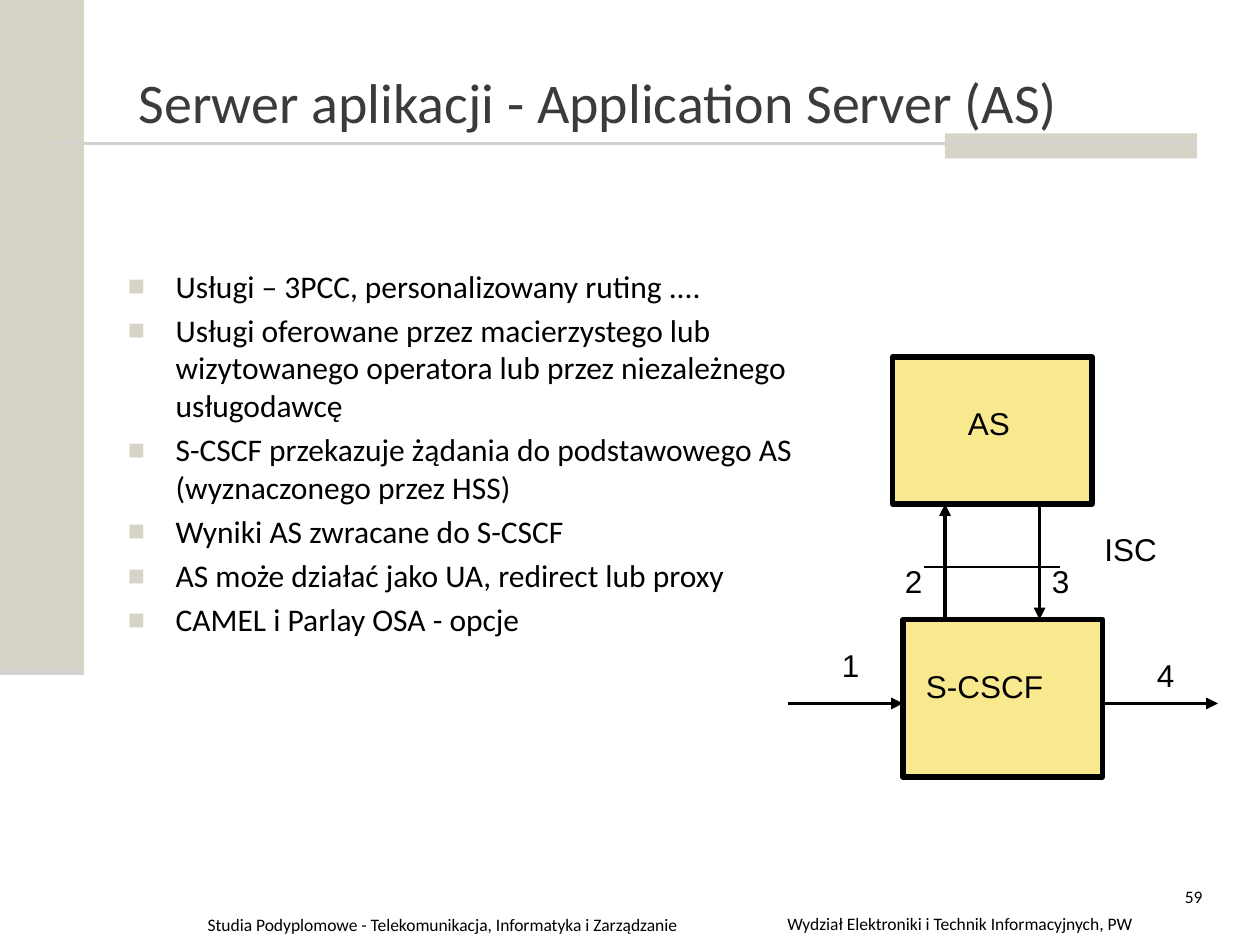
from lxml import etree
from pptx import Presentation
from pptx.dml.color import RGBColor
from pptx.enum.shapes import MSO_CONNECTOR, MSO_SHAPE
from pptx.enum.text import MSO_ANCHOR, PP_ALIGN
from pptx.oxml.ns import qn
from pptx.util import Inches, Pt

LINE = MSO_CONNECTOR.STRAIGHT
RECT = MSO_SHAPE.RECTANGLE
MIDDLE, TOP = MSO_ANCHOR.MIDDLE, MSO_ANCHOR.TOP
LEFT, CENTER, RIGHT = PP_ALIGN.LEFT, PP_ALIGN.CENTER, PP_ALIGN.RIGHT
COLS, ROWS = 120, 90
BLACK, GREY, SAND, RULE, CREAM = "000000", "3B3B3B", "D8D3C7", "D4D2D0", "F9E98E"


def color(code):
    return RGBColor.from_string(code)


def add(parent, tag, **attrs):
    return etree.SubElement(parent, qn(tag), attrs)


class Deck:
    body, label = "Calibri", "Arial"

    def __init__(self):
        self.prs = Presentation()
        self.prs.slide_width, self.prs.slide_height = Inches(10), Inches(7.5)
        self.slide = self.prs.slides.add_slide(self.prs.slide_layouts[5])
        self.shapes = self.slide.shapes

    def grid(self, x, y):
        return (round(self.prs.slide_width * x / COLS),
                round(self.prs.slide_height * y / ROWS))

    def style(self, para, font, size, ink, align=LEFT):
        para.alignment = align
        for run in para.runs:
            run.font.name, run.font.size = font, Pt(size)
            run.font.color.rgb = color(ink)

    def title(self, text, x, y, w, h):
        box = self.shapes.title
        box.left, box.top = self.grid(x, y)
        box.width, box.height = self.grid(w, h)
        frame = box.text_frame
        frame.text = text
        frame.vertical_anchor = MIDDLE
        self.style(frame.paragraphs[0], self.body, 32, GREY)

    def rect(self, x, y, w, h, fill, edge=None):
        box = self.shapes.add_shape(RECT, *self.grid(x, y), *self.grid(w, h))
        box.shadow.inherit = False
        box.fill.solid()
        box.fill.fore_color.rgb = color(fill)
        if edge:
            box.line.color.rgb = color(edge)
            box.line.width = Pt(3)
        else:
            box.line.fill.background()

    def line(self, x1, y1, x2, y2, ink=BLACK, width=2.25, arrow=False):
        line = self.shapes.add_connector(LINE, *self.grid(x1, y1), *self.grid(x2, y2))
        line.line.color.rgb = color(ink)
        line.line.width = Pt(width)
        if arrow:
            add(line.line._get_or_add_ln(), "a:tailEnd", type="triangle")
        add(line._element.spPr, "a:effectLst")

    def text(self, text, x, y, w, h, font=body, size=10, align=LEFT, wrap=True):
        box = self.shapes.add_textbox(*self.grid(x, y), *self.grid(w, h))
        frame = box.text_frame
        frame.word_wrap = wrap
        frame.vertical_anchor = TOP
        frame.text = text
        for para in frame.paragraphs:
            self.style(para, font, size, BLACK, align)
        return frame

    def tag(self, text, x, y, w):
        self.text(text, x, y - 0.1, w, 6, self.label, 18, wrap=False)

    def bullets(self, items, x, y, w, h):
        frame = self.text("\n".join(items), x, y, w, h, size=18)
        for i, para in enumerate(frame.paragraphs):
            para.space_before = Pt(3.6 if i else 0)
            props = para._p.get_or_add_pPr()
            props.set("marL", str(Inches(0.38)))
            props.set("indent", str(-Inches(0.38)))
            add(add(props, "a:buClr"), "a:srgbClr", val=SAND)
            add(props, "a:buSzPct", val="90000")
            add(props, "a:buFont", typeface=self.label)
            add(props, "a:buChar", char="■")


def main():
    deck = Deck()
    deck.rect(0, 0, 8, 64, SAND)
    deck.rect(90, 12.7, 24, 2.4, SAND)
    deck.line(5, 13.7, 114, 13.7, RULE, 1.5)
    deck.line(0, 64, 8, 64, RULE, 3.5)

    deck.title("Serwer aplikacji - Application Server (AS)", 12, 3.4, 102, 12.4)
    deck.bullets([
        "Usługi – 3PCC, personalizowany ruting ....",
        "Usługi oferowane przez macierzystego lub wizytowanego operatora "
        "lub przez niezależnego usługodawcę",
        "S-CSCF przekazuje żądania do podstawowego AS (wyznaczonego przez HSS)",
        "Wyniki AS zwracane do S-CSCF",
        "AS może działać jako UA, redirect lub proxy",
        "CAMEL i Parlay OSA - opcje",
    ], 11, 24.8, 67, 60)

    deck.rect(86, 59, 19, 15, CREAM, BLACK)
    deck.rect(85, 34, 19, 14, CREAM, BLACK)
    deck.line(88, 54, 101, 54, width=0.75)
    for ends in ((75, 67, 86, 67), (90, 59, 90, 48),
                 (99, 48, 99, 59), (105, 67, 116, 67)):
        deck.line(*ends, arrow=True)
    for name, x, y, w in (("S-CSCF", 87, 63, 14.6), ("AS", 91, 38, 6.8),
                          ("ISC", 104, 50, 7.9), ("1", 79, 61, 4.2),
                          ("2", 85, 53, 4.2), ("3", 99, 53, 4.2),
                          ("4", 109, 62, 4.2)):
        deck.tag(name, x, y, w)

    deck.text("Studia Podyplomowe - Telekomunikacja, Informatyka i Zarządzanie",
              18.6, 86.5, 53, 3.3)
    deck.text("Wydział Elektroniki i Technik Informacyjnych, PW",
              71.9, 86.4, 39, 3.3, align=CENTER)
    deck.text("59", 109.9, 83.8, 5.8, 6, align=RIGHT)
    deck.prs.save("out.pptx")


if __name__ == "__main__":
    main()
